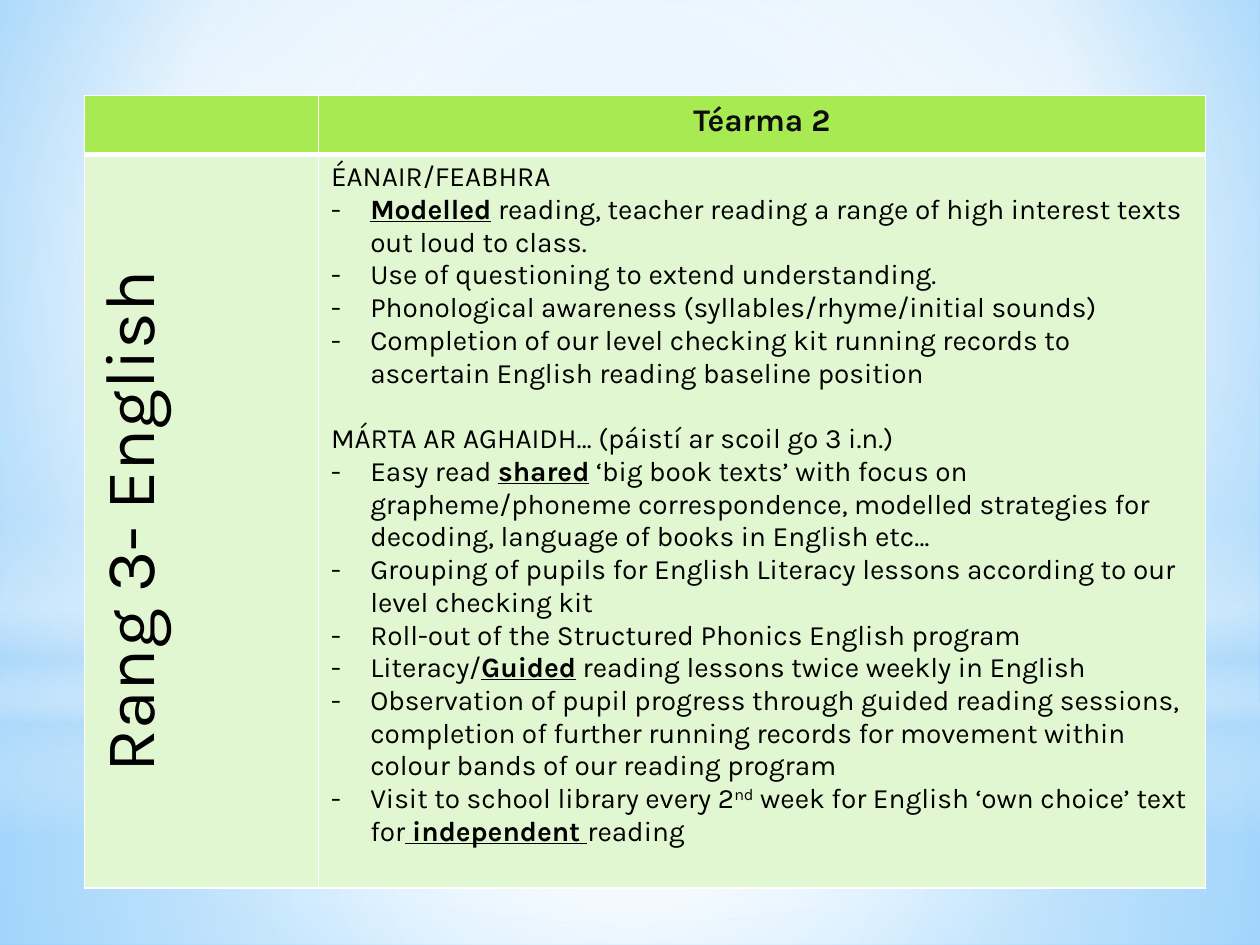
from dataclasses import dataclass
from lxml.etree import SubElement
from pptx import Presentation
from pptx.dml.color import RGBColor
from pptx.enum.shapes import MSO_SHAPE as Shape
from pptx.enum.text import PP_ALIGN as Align
from pptx.oxml.ns import qn
from pptx.util import Cm, Pt


@dataclass(frozen=True)
class Theme:
    font: str = "Karla"
    header_fill: str = "A7EA52"
    body_fill: str = "E1F7D1"
    header_text: str = "0D0D0D"
    text: str = "000000"
    white: str = "FFFFFF"
    haze: str = "B4DCFA"
    sky: str = "9ED5FF"
    deep_sky: str = "5BB9FF"
    title_size: int = 40
    header_size: int = 18
    body_size: int = 16
    line: int = 1
    heavy_line: int = 3


THEME = Theme()
PLAIN, KEY, RAISED = "plain", "key", "raised"
CENTRE = (50, 50, 50, 50)

# Each month: heading, then its points as lists of (text, style)
MONTHS = [
    ("ÉANAIR/FEABHRA", [
        [("Modelled", KEY), (" reading, teacher reading a range of high interest texts "
                             "out loud to class.", PLAIN)],
        [("Use of questioning to extend understanding.", PLAIN)],
        [("Phonological awareness (syllables/rhyme/initial sounds)", PLAIN)],
        [("Completion of our level checking kit running records to ascertain English "
          "reading baseline position", PLAIN)],
    ]),
    ("MÁRTA AR AGHAIDH… (páistí ar scoil go 3 i.n.)", [
        [("Easy read ", PLAIN), ("shared", KEY),
         (" ‘big book texts’ with focus on grapheme/phoneme correspondence, modelled "
          "strategies for decoding, language of books in English etc…", PLAIN)],
        [("Grouping of pupils for English Literacy lessons according to our "
          "level checking kit", PLAIN)],
        [("Roll-out of the Structured Phonics English program", PLAIN)],
        [("Literacy/", PLAIN), ("Guided", KEY),
         (" reading lessons twice weekly in English", PLAIN)],
        [("Observation of pupil progress through guided reading sessions, completion of "
          "further running records for movement within colour bands of our reading "
          "program", PLAIN)],
        [("Visit to school library every 2", PLAIN), ("nd", RAISED),
         (" week for English ‘own choice’ text for", PLAIN),
         (" independent ", KEY), ("reading", PLAIN)],
    ]),
]


def set_gradient(fill, owner, stops, focus=None):
    """Stops are (position %, colour, opacity %); without a focus it runs downwards."""
    fill.gradient()
    grad = next(owner.iter(qn("a:gradFill")))
    for child in list(grad):
        grad.remove(child)
    stop_list = SubElement(grad, qn("a:gsLst"))
    for position, colour, opacity in stops:
        stop = SubElement(stop_list, qn("a:gs"), pos=str(position * 1000))
        rgb = SubElement(stop, qn("a:srgbClr"), val=colour)
        if opacity < 100:
            SubElement(rgb, qn("a:alpha"), val=str(opacity * 1000))
    if focus is None:
        SubElement(grad, qn("a:lin"), ang="5400000", scaled="0")
    else:
        radial = SubElement(grad, qn("a:path"), {"path": "circle"})
        SubElement(radial, qn("a:fillToRect"),
                   {side: str(value * 1000) for side, value in zip("ltrb", focus)})


def draw_sky(slide, width, height):
    """Background gradient and the translucent hazes over it."""
    white, haze = THEME.white, THEME.haze
    set_gradient(slide.background.fill, slide.element,
                 [(0, THEME.sky, 100), (60, white, 100), (100, THEME.deep_sky, 100)],
                 (20, 10, 20, 60))
    horizon = 14.17
    layers = [
        (Shape.RECTANGLE, horizon, height - horizon, CENTRE,
         [(0, white, 91), (37, white, 76), (100, haze, 79)]),
        (Shape.RECTANGLE, 0, horizon, CENTRE,
         [(0, white, 89), (48, white, 62), (100, haze, 79)]),
        (Shape.RECTANGLE, 10.46, 6.35, None,
         [(0, white, 0), (29, white, 30), (45, haze, 40),
          (55, white, 26), (65, haze, 60), (100, white, 0)]),
        (Shape.OVAL, 4.45, horizon, CENTRE, [(0, white, 100), (56, white, 0)]),
    ]
    for outline, top, layer_height, focus, stops in layers:
        layer = slide.shapes.add_shape(outline, 0, Cm(top), Cm(width), Cm(layer_height))
        layer.shadow.inherit = False
        layer.line.fill.background()
        set_gradient(layer.fill, layer.element.spPr, stops, focus)


def style_cell(cell, colour, top, bottom):
    cell.fill.solid()
    cell.fill.fore_color.rgb = RGBColor.from_string(colour)
    props = cell._tc.get_or_add_tcPr()
    edges = [("L", THEME.line), ("R", THEME.line), ("T", top), ("B", bottom)]
    for index, (side, weight) in enumerate(edges):
        edge = SubElement(props, qn(f"a:ln{side}"), w=str(Pt(weight)))
        SubElement(SubElement(edge, qn("a:solidFill")), qn("a:srgbClr"), val=THEME.white)
        props.insert(index, edge)


def add_run(paragraph, text, size, colour=THEME.text, bold=False):
    run = paragraph.add_run()
    run.text = text
    run.font.name = THEME.font
    run.font.size = Pt(size)
    run.font.bold = bold
    run.font.color.rgb = RGBColor.from_string(colour)
    return run


def write_point(paragraph, parts):
    """A dashed point with a hanging indent."""
    props = paragraph._p.get_or_add_pPr()
    indent = Cm(0.79)
    props.set("marL", str(indent))
    props.set("indent", str(-indent))
    SubElement(props, qn("a:buFont"), typeface=THEME.font)
    SubElement(props, qn("a:buChar"), char="-")
    for text, style in parts:
        run = add_run(paragraph, text, THEME.body_size, bold=style == KEY)
        run.font.underline = style == KEY
        if style == RAISED:
            run.font._element.set("baseline", "30000")


def write_months(frame):
    paragraph = frame.paragraphs[0]
    for number, (heading, points) in enumerate(MONTHS):
        if number:
            paragraph = frame.add_paragraph()
            paragraph.space_before = Pt(18.7)
        add_run(paragraph, heading, THEME.body_size)
        for parts in points:
            write_point(frame.add_paragraph(), parts)


def draw_plan(slide, left, top, width, height):
    """Term plan: class name on the left, monthly points on the right."""
    plan = slide.shapes.add_table(2, 2, Cm(left), Cm(top), Cm(width), Cm(height)).table
    class_width, header_height = 4.72, 1.19
    plan.columns[0].width = Cm(class_width)
    plan.columns[1].width = Cm(width - class_width)
    plan.rows[0].height = Cm(header_height)
    plan.rows[1].height = Cm(height - header_height)
    for column in range(2):
        style_cell(plan.cell(0, column), THEME.header_fill, THEME.line, THEME.heavy_line)
        style_cell(plan.cell(1, column), THEME.body_fill, THEME.heavy_line, THEME.line)

    # Term heading
    term = plan.cell(0, 1).text_frame.paragraphs[0]
    term.alignment = Align.CENTER
    add_run(term, "Téarma 2", THEME.header_size, THEME.header_text, bold=True)

    # Class name, reading upwards
    class_cell = plan.cell(1, 0)
    class_cell._tc.get_or_add_tcPr().set("vert", "vert270")
    class_name = class_cell.text_frame.paragraphs[0]
    class_name.alignment = Align.CENTER
    add_run(class_name, "Rang 3- English", THEME.title_size)

    write_months(plan.cell(1, 1).text_frame)


def main():
    width, height = 25.4, 19.05
    deck = Presentation()
    deck.slide_width, deck.slide_height = Cm(width), Cm(height)
    slide = deck.slides.add_slide(deck.slide_layouts[6])
    draw_sky(slide, width, height)
    draw_plan(slide, 1.7, 1.93, 22.6, 15.97)
    deck.save("out.pptx")


if __name__ == "__main__":
    main()
